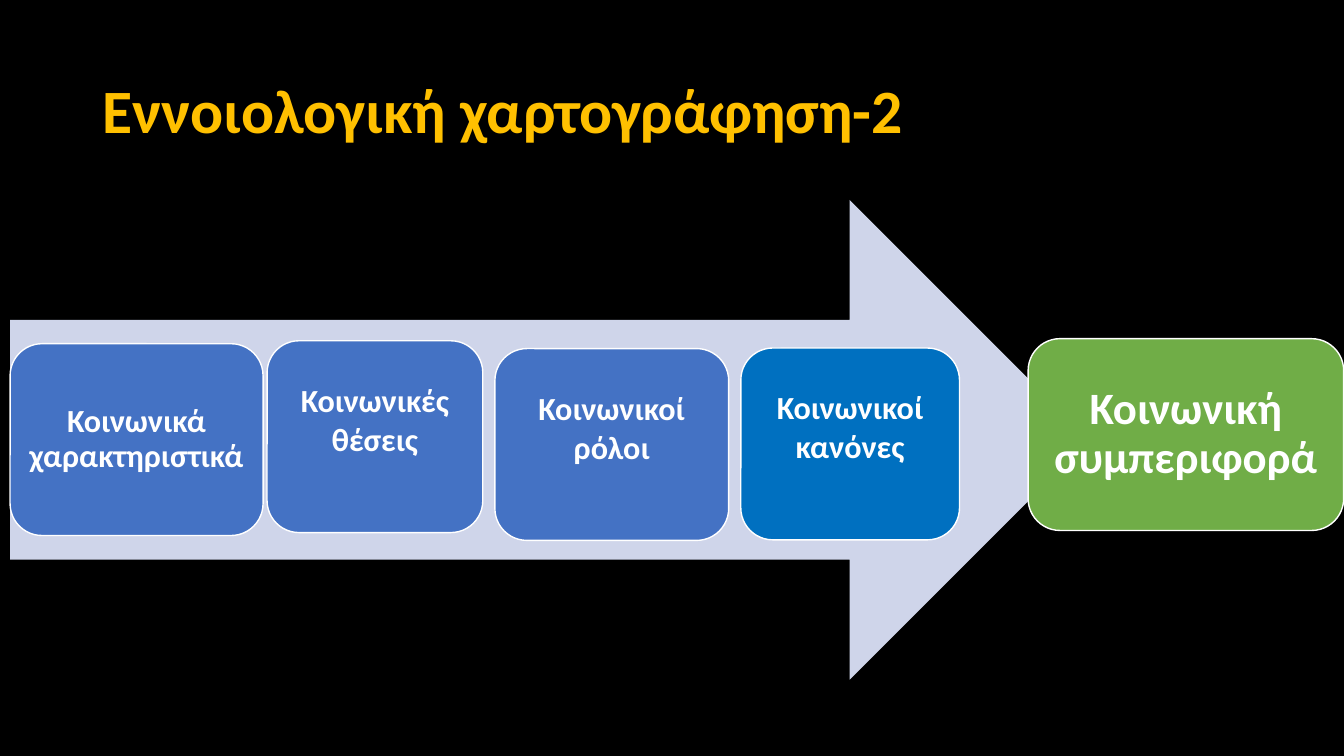
from pptx import Presentation
from pptx.dml.color import RGBColor
from pptx.enum import shapes, text
from pptx.util import Pt

KIND = shapes.MSO_SHAPE
ALIGN = text.PP_ALIGN
WHITE = "FFFFFF"
BLUE = "4472C4"
DROP = 25  # extra bottom inset that lifts a label above the middle

# left, top, width, fill, label, size, inset, lift
STEPS = [
    (7.2, 245.5, 180.7, BLUE, "Κοινωνικά χαρακτηριστικά", 23, 6, 0),
    (190.8, 243.4, 154.1, BLUE, "Κοινωνικές θέσεις", 23, 7, DROP),
    (353.5, 249, 167, BLUE, "Κοινωνικοί ρόλοι", 23, 7, DROP),
    (734.4, 241.9, 225.4, "70AD47", "Κοινωνική συμπεριφορά", 32, 9, 0),
    (529.2, 248.6, 156.2, "0070C0", "Κοινωνικοί κανόνες", 23, 7, DROP),
]


def hue(code):
    return RGBColor.from_string(code)


def paint(fill, code):
    fill.solid()
    fill.fore_color.rgb = hue(code)


def put(obj, form):
    for name, value in form.items():
        setattr(obj, name, value)


def write(shape, words, size, code, align, space, pads):
    """Fill a shape with one bold paragraph; pads run left, top, right, bottom."""
    frame = shape.text_frame
    sides = ("left", "top", "right", "bottom")
    put(frame, {f"margin_{side}": Pt(pad) for side, pad in zip(sides, pads)})
    put(frame, {"word_wrap": True, "vertical_anchor": text.MSO_ANCHOR.MIDDLE})
    para = frame.paragraphs[0]
    put(para, {"alignment": align, "line_spacing": space})
    run = para.add_run()
    run.text = words
    put(run.font, {"name": "Calibri", "size": Pt(size), "bold": True})
    run.font.color.rgb = hue(code)


def add_form(slide, kind, box, code, edge=None):
    shape = slide.shapes.add_shape(kind, *map(Pt, box))
    shape.shadow.inherit = False
    paint(shape.fill, code)
    if edge:
        paint(shape.line.fill, edge)
        shape.line.width = Pt(1)
    else:
        shape.line.fill.background()
    return shape


def add_title(slide, words):
    box = slide.shapes.add_textbox(Pt(66), Pt(28.8), Pt(828), Pt(104.4))
    write(box, words, 44, "FFC000", ALIGN.LEFT, 0.9, (7.2, 3.6, 7.2, 3.6))


def add_step(slide, left, top, width, code, words, size, pad, lift):
    box = (left, top, width, 137)
    card = add_form(slide, KIND.ROUNDED_RECTANGLE, box, code, WHITE)
    space = 1.0 if lift else 0.9
    write(card, words, size, WHITE, ALIGN.CENTER, space,
          (pad, pad, pad, pad + lift))


def main():
    deck = Presentation()
    put(deck, {"slide_width": Pt(960), "slide_height": Pt(540)})
    slide = deck.slides.add_slide(deck.slide_layouts[6])
    paint(slide.background.fill, "000000")

    # Heading
    add_title(slide, "Εννοιολογική χαρτογράφηση-2")

    # Arrow behind the steps
    add_form(slide, KIND.RIGHT_ARROW, (7.2, 142.8, 771, 342.7), "CFD5EA")

    # Steps along the arrow
    for step in STEPS:
        add_step(slide, *step)

    deck.save("out.pptx")


if __name__ == "__main__":
    main()
